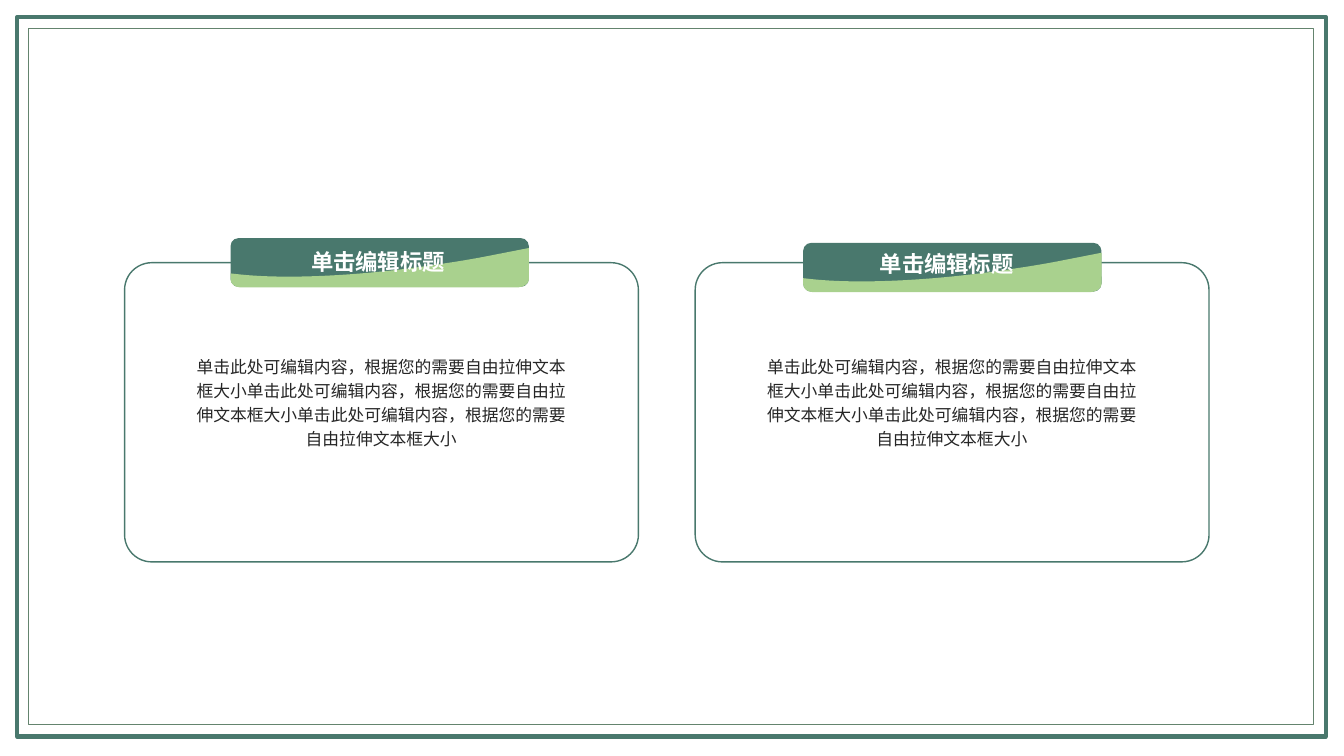
"""Build a slide with two titled text cards inside a double frame."""
from dataclasses import dataclass

from lxml import etree
from pptx import Presentation
from pptx.dml.color import RGBColor
from pptx.enum.shapes import MSO_SHAPE as Preset
from pptx.enum.text import MSO_AUTO_SIZE as AutoSize, PP_ALIGN as Align
from pptx.oxml.ns import qn
from pptx.util import Cm, Pt


@dataclass(frozen=True)
class Theme:
    green: RGBColor = RGBColor.from_string("49786D")
    frame: RGBColor = RGBColor.from_string("64846E")
    leaf: RGBColor = RGBColor.from_string("A9D18E")
    white: RGBColor = RGBColor.from_string("FFFFFF")
    ink: RGBColor = RGBColor.from_string("262626")
    font: str = "Arial"
    title_size: int = 16
    body_size: int = 12


theme = Theme()


def style_shape(shape, fill=None, line=None, width=0):
    shape.shadow.inherit = False
    for part, color in ((shape.fill, fill), (shape.line.fill, line)):
        if color is None:
            part.background()
        else:
            part.solid()
            part.fore_color.rgb = color
    if line is not None:
        shape.line.width = Pt(width)


def add_text(box, text, size, color, bold=False):
    box.text_frame.text = text
    box.text_frame.auto_size = AutoSize.SHAPE_TO_FIT_TEXT
    paragraph = box.text_frame.paragraphs[0]
    spacing = etree.SubElement(paragraph._p.get_or_add_pPr(), qn("a:spcBef"))
    etree.SubElement(spacing, qn("a:spcPct")).set("val", "20000")
    font = paragraph.runs[0].font
    font.name, font.size, font.bold = theme.font, Pt(size), bold
    font.color.rgb = color
    properties = paragraph.runs[0]._r.get_or_add_rPr()
    etree.SubElement(properties, qn("a:ea")).set("typeface", theme.font)
    return paragraph


presentation = Presentation()
presentation.slide_width = Cm(33.87)
presentation.slide_height = Cm(19.05)
slide = presentation.slides.add_slide(presentation.slide_layouts[6])
shapes = slide.shapes

for left, top, width, height, color, weight in (
    (0.43, 0.43, 32.98, 18.13, theme.green, 3),
    (0.71, 0.71, 32.4, 17.55, theme.frame, 0.5),
):
    border = shapes.add_shape(Preset.RECTANGLE, Cm(left), Cm(top), Cm(width), Cm(height))
    style_shape(border, line=color, width=weight)

body_text = "单击此处可编辑内容，根据您的需要自由拉伸文本框大小" * 3
title_text = "单击编辑标题"
cards = (
    {"left": 3.14, "tab": (5.81, 6), "title": (7.59, 6.13)},
    {"left": 17.52, "tab": (20.24, 6.12), "title": (21.92, 6.17)},
)

wave_start = (7.52, 0.25)
wave_segments = (
    ((7.52, 1.04),),
    ((7.52, 1.14), (7.39, 1.24), (7.26, 1.24)),
    ((0.23, 1.24),),
    ((0.1, 1.24), (0, 1.14), (0, 1.04)),
    ((0, 0.89),),
    ((0.18, 0.91),),
    ((1.35, 1.04), (3.25, 0.97), (5.38, 0.64)),
    ((5.79, 0.58), (6.2, 0.51), (6.6, 0.43)),
)

for card in cards:
    panel = shapes.add_shape(
        Preset.ROUNDED_RECTANGLE, Cm(card["left"]), Cm(6.62), Cm(12.95), Cm(7.54)
    )
    panel.adjustments[0] = 0.091
    style_shape(panel, theme.white, theme.green, 1)

for card in cards:
    left, top = card["tab"]
    tab = shapes.add_shape(
        Preset.ROUNDED_RECTANGLE, Cm(left), Cm(top), Cm(7.52), Cm(1.23)
    )
    style_shape(tab, theme.green)
    anchors = [(Cm(left + x), Cm(top + y)) for *_, (x, y) in wave_segments]
    builder = shapes.build_freeform(Cm(left + wave_start[0]), Cm(top + wave_start[1]))
    builder.add_line_segments(anchors, close=True)
    wave = builder.convert_to_shape()
    style_shape(wave, theme.leaf)
    lines = list(wave._element.iter(qn("a:lnTo")))
    for line, (*controls, _) in zip(lines, wave_segments):
        if controls:
            line.tag = qn("a:cubicBezTo")
        for index, (x, y) in enumerate(controls):
            control = etree.Element(qn("a:pt"))
            control.set("x", str(Cm(left + x) - wave.left))
            control.set("y", str(Cm(top + y) - wave.top))
            line.insert(index, control)

for card in cards:
    body = shapes.add_textbox(Cm(card["left"] + 1.81), Cm(8.88), Cm(9.32), Cm(2.46))
    frame = body.text_frame
    frame.word_wrap = True
    frame.margin_left = frame.margin_right = frame.margin_top = frame.margin_bottom = 0
    paragraph = add_text(body, body_text, theme.body_size, theme.ink)
    paragraph.alignment = Align.CENTER
    paragraph.line_spacing = 1.2

for card in cards:
    left, top = card["title"]
    title = shapes.add_textbox(Cm(left), Cm(top), Cm(3.94), Cm(0.94))
    title.text_frame.word_wrap = False
    add_text(title, title_text, theme.title_size, theme.white, bold=True)

presentation.save("out.pptx")
